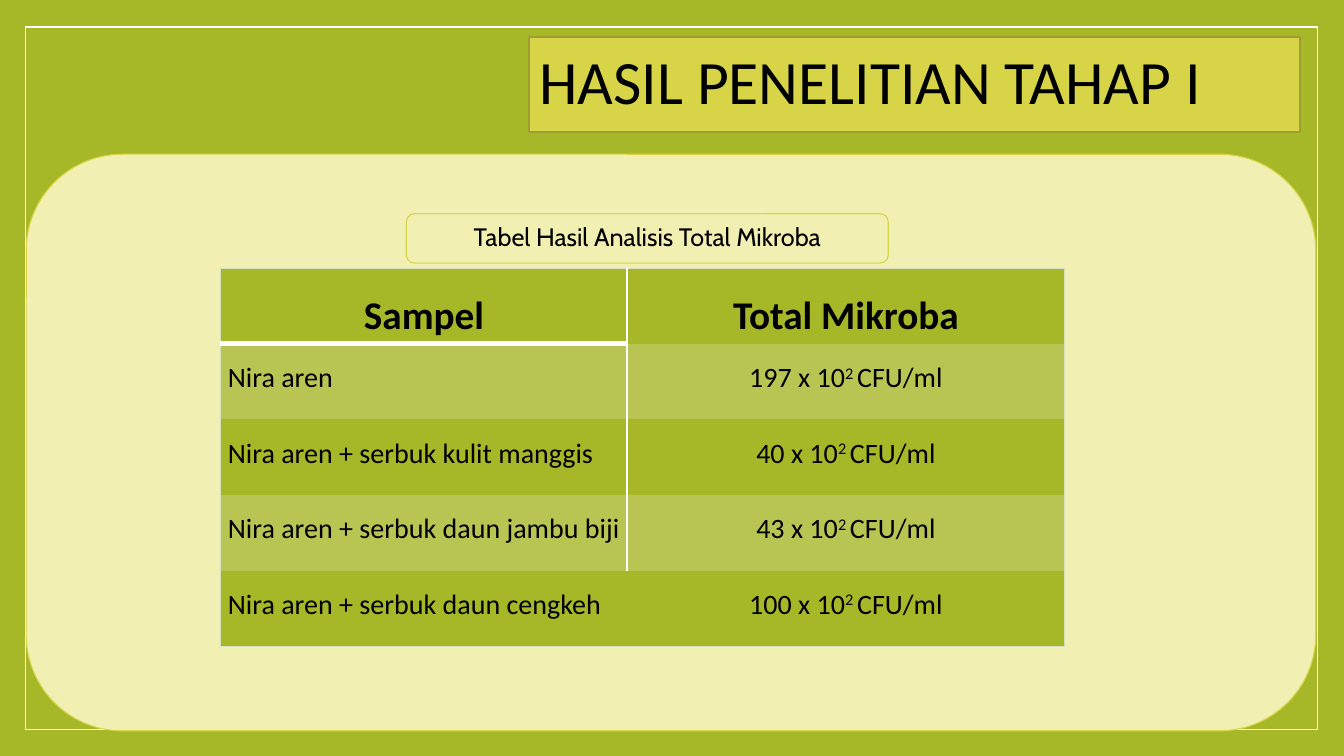
from lxml.etree import SubElement
from pptx import Presentation
from pptx.dml.color import RGBColor
from pptx.enum.shapes import MSO_SHAPE
from pptx.enum.text import MSO_ANCHOR, MSO_AUTO_SIZE, PP_ALIGN
from pptx.oxml.ns import qn
from pptx.util import Inches, Pt

COLORS = {
    "green": "A6B727",
    "light green": "B8C552",
    "yellow": "D7D447",
    "olive": "9F9D35",
    "cream": "F1F0B2",
    "edge": "D8DFBE",
    "white": "FFFFFF",
    "black": "000000",
}
HEADINGS = ("Sampel", "Total Mikroba")
RESULTS = [
    ("Nira aren", 197),
    ("Nira aren + serbuk kulit manggis", 40),
    ("Nira aren + serbuk daun jambu biji", 43),
    ("Nira aren + serbuk daun cengkeh", 100),
]
NO_TABLE_STYLE = "{2D5ABB26-0587-4C30-8999-92F81FD0307C}"


def color(name):
    """Return the named colour."""
    return RGBColor.from_string(COLORS[name])


def write_text(paragraph, text, size, font="Calibri", bold=False,
               align=PP_ALIGN.CENTER, spacing=0.9, raised=False):
    """Add a formatted run to a paragraph."""
    paragraph.alignment = align
    paragraph.line_spacing = spacing
    run = paragraph.add_run()
    run.text = text
    run.font.size = Pt(size)
    run.font.name = font
    run.font.bold = bold
    run.font.color.rgb = color("black")
    if raised:
        run.font._element.set("baseline", "30000")


class ResultSlide:
    """Hold the slide and draw its elements in one style."""

    def __init__(self, presentation):
        """Add a title slide with a green background."""
        self.slide = presentation.slides.add_slide(presentation.slide_layouts[5])
        self.slide.background.fill.solid()
        self.slide.background.fill.fore_color.rgb = color("green")

    def paint(self, shape, fill, line, width):
        """Set the fill and outline of a shape."""
        shape.fill.solid()
        shape.fill.fore_color.rgb = color(fill)
        shape.line.color.rgb = color(line)
        shape.line.width = Pt(width)

    def add_box(self, kind, bounds, fill, line, width=0.79):
        """Add a preset shape without shadow."""
        shape = self.slide.shapes.add_shape(kind, *map(Inches, bounds))
        shape.shadow.inherit = False
        self.paint(shape, fill, line, width)
        return shape

    def add_title(self, text, bounds):
        """Turn the title placeholder into a rounded box above the frame."""
        title = self.slide.shapes.title
        title.left, title.top, title.width, title.height = map(Inches, bounds)
        geometry = SubElement(title._element.spPr, qn("a:prstGeom"), prst="roundRect")
        SubElement(geometry, qn("a:avLst"))
        self.paint(title, "yellow", "olive", 1.5)
        frame = title.text_frame
        frame.auto_size = MSO_AUTO_SIZE.NONE
        frame.vertical_anchor = MSO_ANCHOR.MIDDLE
        write_text(frame.paragraphs[0], text, 44, align=PP_ALIGN.JUSTIFY)
        self.slide.shapes._spTree.append(title._element)

    def add_caption(self, text, bounds):
        """Add the rounded caption of the table."""
        shape = self.add_box(MSO_SHAPE.ROUNDED_RECTANGLE, bounds, "cream", "yellow")
        frame = shape.text_frame
        frame.word_wrap = True
        frame.vertical_anchor = MSO_ANCHOR.MIDDLE
        write_text(frame.paragraphs[0], text, 18, font="Cabin")

    def format_cell(self, cell, fill, borders):
        """Set the margins, borders and fill of a cell."""
        cell.margin_left = cell.margin_right = Inches(0.07)
        cell.margin_top = cell.margin_bottom = 0
        properties = cell._tc.get_or_add_tcPr()
        for side in "LRTB":
            name, width = borders.get(side, (None, 0))
            line = SubElement(properties, qn(f"a:ln{side}"), w=str(Pt(width)))
            if name:
                solid = SubElement(line, qn("a:solidFill"))
                SubElement(solid, qn("a:srgbClr"), val=COLORS[name])
            else:
                SubElement(line, qn("a:noFill"))
        cell.fill.solid()
        cell.fill.fore_color.rgb = color(fill)

    def borders(self, row, column):
        """Return the visible borders of a cell by its place."""
        edge, last = ("edge", 0.79), len(RESULTS)
        borders = {"R": edge} if column else {"L": edge}
        if row == 0:
            borders["T"] = edge
        if row == last:
            borders["B"] = edge
        elif column == 0:
            borders["R"] = ("white", 1.5)
        if row == 0 and column == 0:
            borders["B"] = ("white", 4.25)
        if row < last and column == 1:
            borders["L"] = ("white", 1.5)
        if row == 1 and column == 0:
            borders["T"] = ("white", 4.25)
        return borders

    def add_results(self, left, top, widths, row_height):
        """Add the table of samples and microbe counts."""
        count = len(RESULTS) + 1
        table = self.slide.shapes.add_table(
            count, len(widths), Inches(left), Inches(top),
            Inches(sum(widths)), Inches(row_height * count)).table
        table._tbl.tblPr.find(qn("a:tableStyleId")).text = NO_TABLE_STYLE
        table.horz_banding = False
        for column, width in zip(table.columns, widths):
            column.width = Inches(width)
        for row in range(count):
            for column in range(len(widths)):
                fill = "light green" if row % 2 else "green"
                self.format_cell(table.cell(row, column), fill, self.borders(row, column))
        for column, heading in enumerate(HEADINGS):
            paragraph = table.cell(0, column).text_frame.paragraphs[0]
            write_text(paragraph, heading, 28, bold=True, spacing=1.5)
        for row, (sample, amount) in enumerate(RESULTS, 1):
            paragraph = table.cell(row, 0).text_frame.paragraphs[0]
            write_text(paragraph, sample, 20, align=PP_ALIGN.LEFT, spacing=1.5)
            paragraph = table.cell(row, 1).text_frame.paragraphs[0]
            write_text(paragraph, f"{amount} x 10", 20, spacing=1.5)
            write_text(paragraph, "2 ", 20, spacing=1.5, raised=True)
            write_text(paragraph, "CFU/ml", 20, spacing=1.5)


def main():
    """Build and save the presentation."""
    presentation = Presentation()
    presentation.slide_width = Inches(13.33)
    presentation.slide_height = Inches(7.5)
    page = ResultSlide(presentation)
    page.add_box(MSO_SHAPE.RECTANGLE, (0.25, 0.27, 12.82, 6.97), "green", "white", 1)
    page.add_title("HASIL PENELITIAN TAHAP I", (5.25, 0.37, 7.64, 0.94))
    page.add_box(MSO_SHAPE.ROUNDED_RECTANGLE, (0.26, 1.53, 12.79, 5.72), "cream", "yellow")
    page.add_caption("Tabel Hasil Analisis Total Mikroba", (4.03, 2.12, 4.78, 0.49))
    page.add_results(2.19, 2.66, (4.03, 4.34), 0.75)
    presentation.save("out.pptx")


if __name__ == "__main__":
    main()
